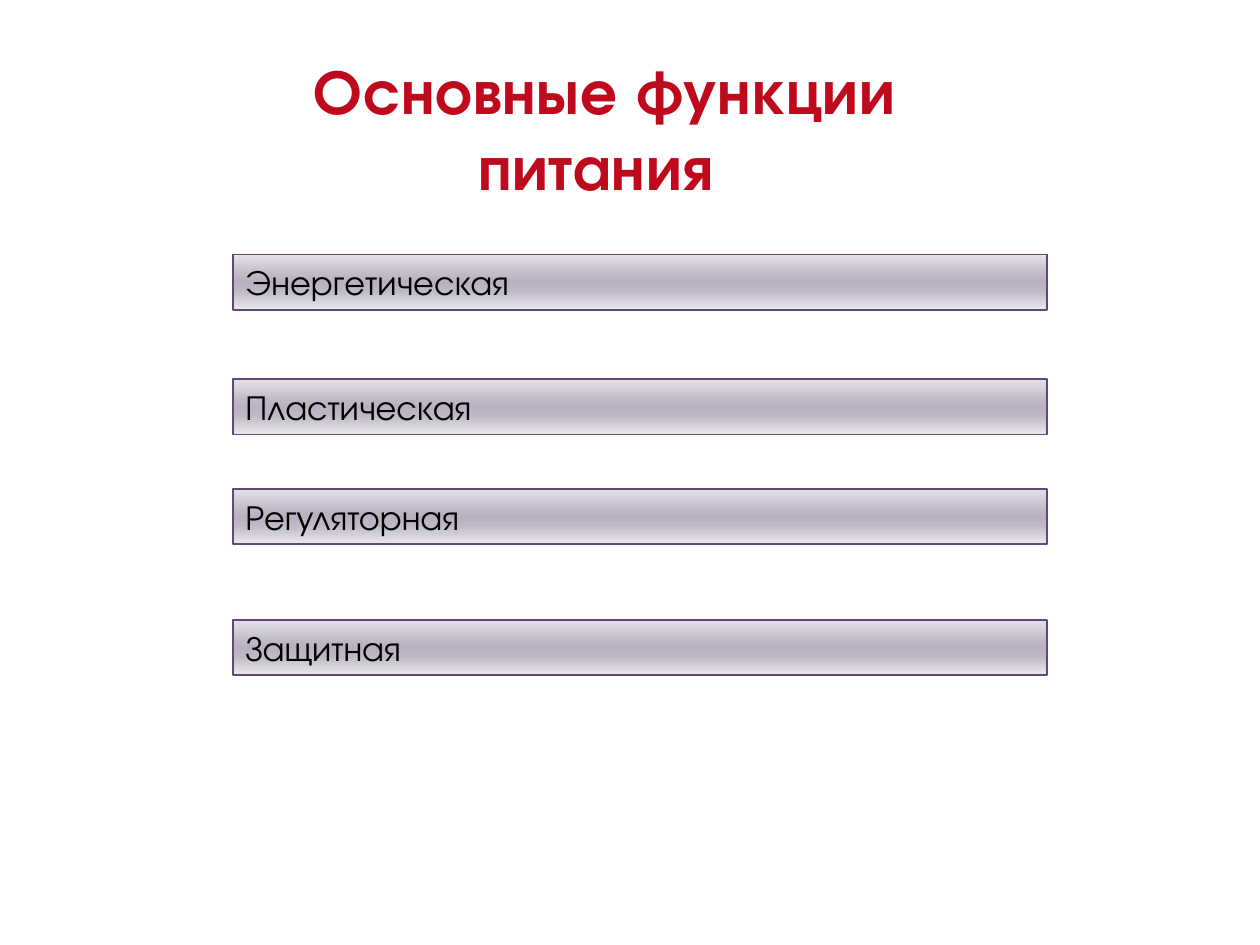
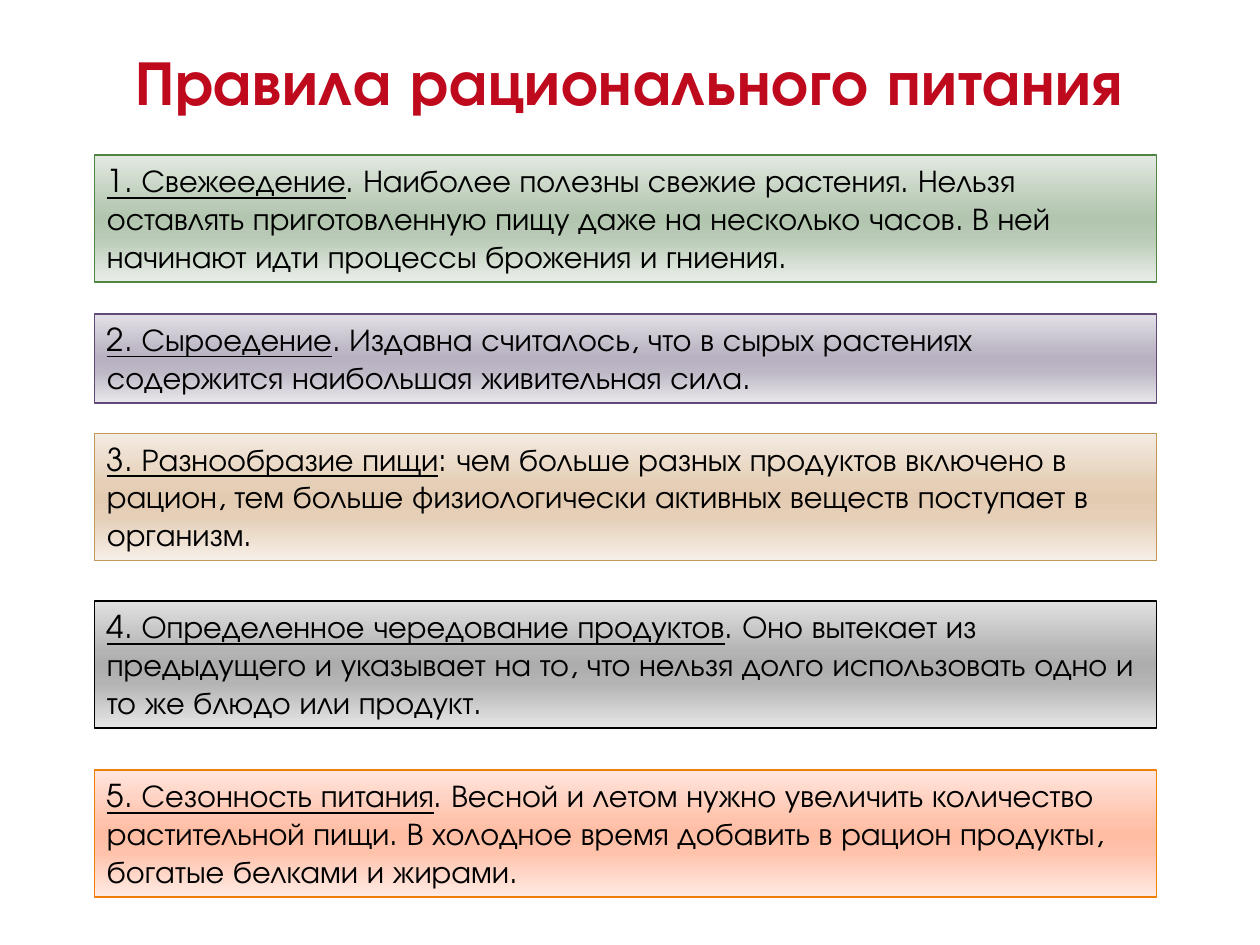
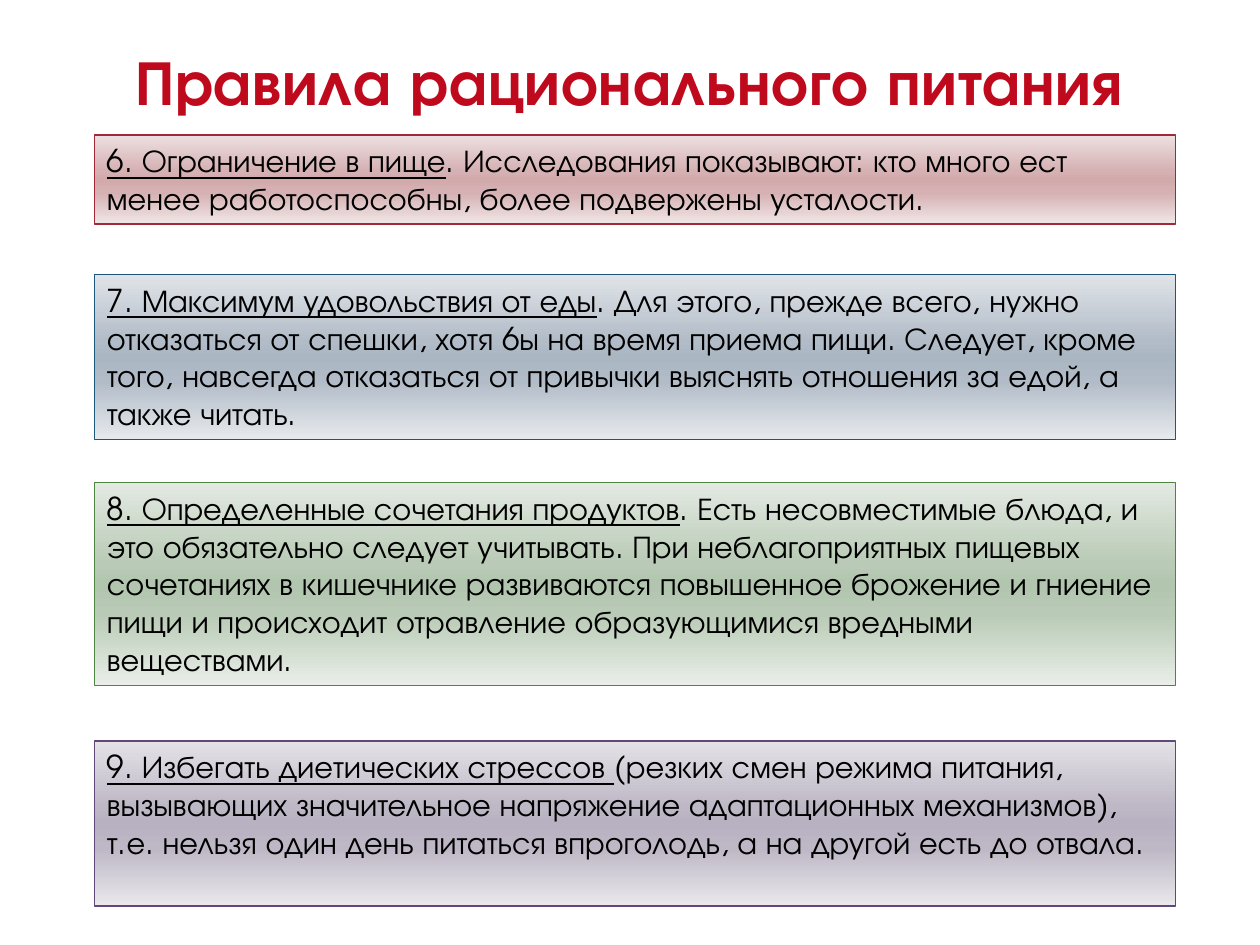
from collections import namedtuple

from lxml import etree
from pptx import Presentation
from pptx.dml.color import RGBColor as Rgb
from pptx.enum.shapes import MSO_SHAPE as Shape
from pptx.enum.text import MSO_ANCHOR as Anchor, MSO_AUTO_SIZE as AutoSize, PP_ALIGN as Align
from pptx.oxml.ns import qn
from pptx.util import Inches, Pt

# Colours: each band has an outline and a gradient with a darker core
RED = Rgb(0xBF, 0x09, 0x1D)
BLACK = Rgb(0, 0, 0)
Band = namedtuple("Band", "outline top inner core bottom")


def band(*codes):
    return Band(*(Rgb.from_string(code) for code in codes))


GREEN_BAND = band("4E8542", "E3E9E2", "B9CBB6", "B2C6AF", "E9EEE8")
VIOLET_BAND = band("604878", "E4E2E7", "BEB8C6", "B8B1C1", "EAE8EC")
SAND_BAND = band("C19859", "F3EBE2", "E5CFB7", "E3CBB1", "F6EFE8")
GREY_BAND = band("000000", "E1E1E1", "B4B4B4", "ADADAD", "E7E7E7")
ORANGE_BAND = band("F07F09", "FFE6DE", "FFC3AC", "FFBDA4", "FFEBE5")
RED_BAND = band("9F2936", "EDE0E1", "D6B1B3", "D2AAAC", "F1E7E7")
BLUE_BAND = band("1B587C", "E0E4E8", "B2BCC8", "ABB6C3", "E7EAED")

# Text formats
FONT = "TeX Gyre Adventor"
TITLE_FORMAT = {"name": FONT, "size": Pt(36), "bold": True}
FUNCTION_FORMAT = {"name": FONT, "size": Pt(20)}
RULE_FORMAT = {"name": FONT, "size": Pt(18)}

# Content
FUNCTIONS = [
    (2.02, "Энергетическая"),
    (3.01, "Пластическая"),
    (3.88, "Регуляторная"),
    (4.92, "Защитная"),
]
RULES_TITLE = "Правила рационального питания"
# Each rule: top, height in text lines, band, underlined name, explanation
FIRST_RULES = [
    (1.23, 3, GREEN_BAND, "1. Свежеедение",
     ". Наиболее полезны свежие растения. Нельзя оставлять приготовленную пищу "
     "даже на несколько часов. В ней начинают идти процессы брожения и гниения."),
    (2.49, 2, VIOLET_BAND, "2. Сыроедение",
     ". Издавна считалось, что в сырых растениях содержится наибольшая "
     "живительная сила."),
    (3.44, 3, SAND_BAND, "3. Разнообразие пищи",
     ": чем больше разных продуктов включено в рацион, тем больше "
     "физиологически активных веществ поступает в организм."),
    (4.77, 3, GREY_BAND, "4. Определенное чередование продуктов",
     ". Оно вытекает из предыдущего и указывает на то, что нельзя долго "
     "использовать одно и то же блюдо или продукт."),
    (6.11, 3, ORANGE_BAND, "5. Сезонность питания",
     ". Весной и летом нужно увеличить количество растительной пищи. В холодное "
     "время добавить в рацион продукты, богатые белками и жирами."),
]
LAST_RULES = [
    (1.07, 2, RED_BAND, "6. Ограничение в пище",
     ". Исследования показывают: кто много ест менее работоспособны, более "
     "подвержены усталости."),
    (2.18, 4, BLUE_BAND, "7. Максимум удовольствия от еды",
     ". Для этого, прежде всего, нужно отказаться от спешки, хотя 6ы на время "
     "приема пищи. Следует, кроме того, навсегда отказаться от привычки выяснять "
     "отношения за едой, а также читать."),
    (3.83, 5, GREEN_BAND, "8. Определенные сочетания продуктов",
     ". Есть несовместимые блюда, и это обязательно следует учитывать. При "
     "неблагоприятных пищевых сочетаниях в кишечнике развиваются повышенное "
     "брожение и гниение пищи и происходит отравление образующимися вредными "
     "веществами."),
    (5.88, 4, VIOLET_BAND, "9. Избегать диетических стрессов ",
     "(резких смен режима питания, вызывающих значительное напряжение "
     "адаптационных механизмов), т.е. нельзя один день питаться впроголодь, "
     "а на другой есть до отвала."),
]


class Painter:
    """Holds the deck, the shared style and the current page."""

    def __init__(self):
        self.deck = Presentation()
        self.deck.slide_width, self.deck.slide_height = Inches(10), Inches(7.5)
        self.page = None

    def new_page(self, title, left, top, width, height):
        self.page = self.deck.slides.add_slide(self.deck.slide_layouts[5])
        box = self.page.shapes.title
        self.place(box, left, top, width, height)
        self.set_frame(box, Align.CENTER)
        span = self.add_span(box, title, TITLE_FORMAT, RED)
        span._r.get_or_add_rPr().set("spc", "50")

    def place(self, box, *lengths):
        for name, length in zip(("left", "top", "width", "height"), lengths):
            setattr(box, name, Inches(length))

    def set_frame(self, box, align):
        frame = box.text_frame
        settings = {"word_wrap": True, "vertical_anchor": Anchor.TOP,
                    "auto_size": AutoSize.SHAPE_TO_FIT_TEXT}
        for name, value in settings.items():
            setattr(frame, name, value)
        frame.paragraphs[0].alignment = align

    def add_span(self, box, text, text_format, color=BLACK, **extra):
        span = box.text_frame.paragraphs[0].add_run()
        span.text = text
        for name, value in {**text_format, **extra}.items():
            setattr(span.font, name, value)
        span.font.color.rgb = color
        return span

    def add_band(self, colors, *lengths):
        box = self.page.shapes.add_shape(
            Shape.RECTANGLE, *(Inches(length) for length in lengths))
        box.shadow.inherit = False
        box.line.color.rgb = colors.outline
        box.line.width = Pt(0.94)
        self.fill_band(box, colors)
        self.set_frame(box, Align.LEFT)
        return box

    def fill_band(self, box, colors):
        box.fill.gradient()
        box.fill.gradient_angle = 270
        stops = box._element.spPr.find(qn("a:gradFill")).find(qn("a:gsLst"))
        for stop in list(stops):
            stops.remove(stop)
        for percent, color in ((0, colors.top), (40, colors.inner), (50, colors.core),
                               (65, colors.inner), (100, colors.bottom)):
            stop = etree.SubElement(stops, qn("a:gs"), pos=str(percent * 1000))
            etree.SubElement(stop, qn("a:srgbClr"), val=str(color))

    def add_function(self, top, name):
        box = self.add_band(VIOLET_BAND, 1.85, top, 6.46, 0.44)
        self.add_span(box, name, FUNCTION_FORMAT)

    def add_rule(self, width, top, lines, colors, name, explanation):
        height = round(0.1 + 0.303 * lines, 2)
        box = self.add_band(colors, 0.75, top, width, height)
        self.add_span(box, name, RULE_FORMAT, underline=True)
        self.add_span(box, explanation, RULE_FORMAT)


def main():
    painter = Painter()

    # Functions of nutrition
    painter.new_page("Основные функции питания ", 2.01, 0.36, 5.59, 1.31)
    for function in FUNCTIONS:
        painter.add_function(*function)

    # Rules of rational nutrition, over two pages
    for width, rules in ((8.43, FIRST_RULES), (8.58, LAST_RULES)):
        painter.new_page(RULES_TITLE, 0, 0.29, 10, 0.71)
        for rule in rules:
            painter.add_rule(width, *rule)

    painter.deck.save("out.pptx")


if __name__ == "__main__":
    main()
